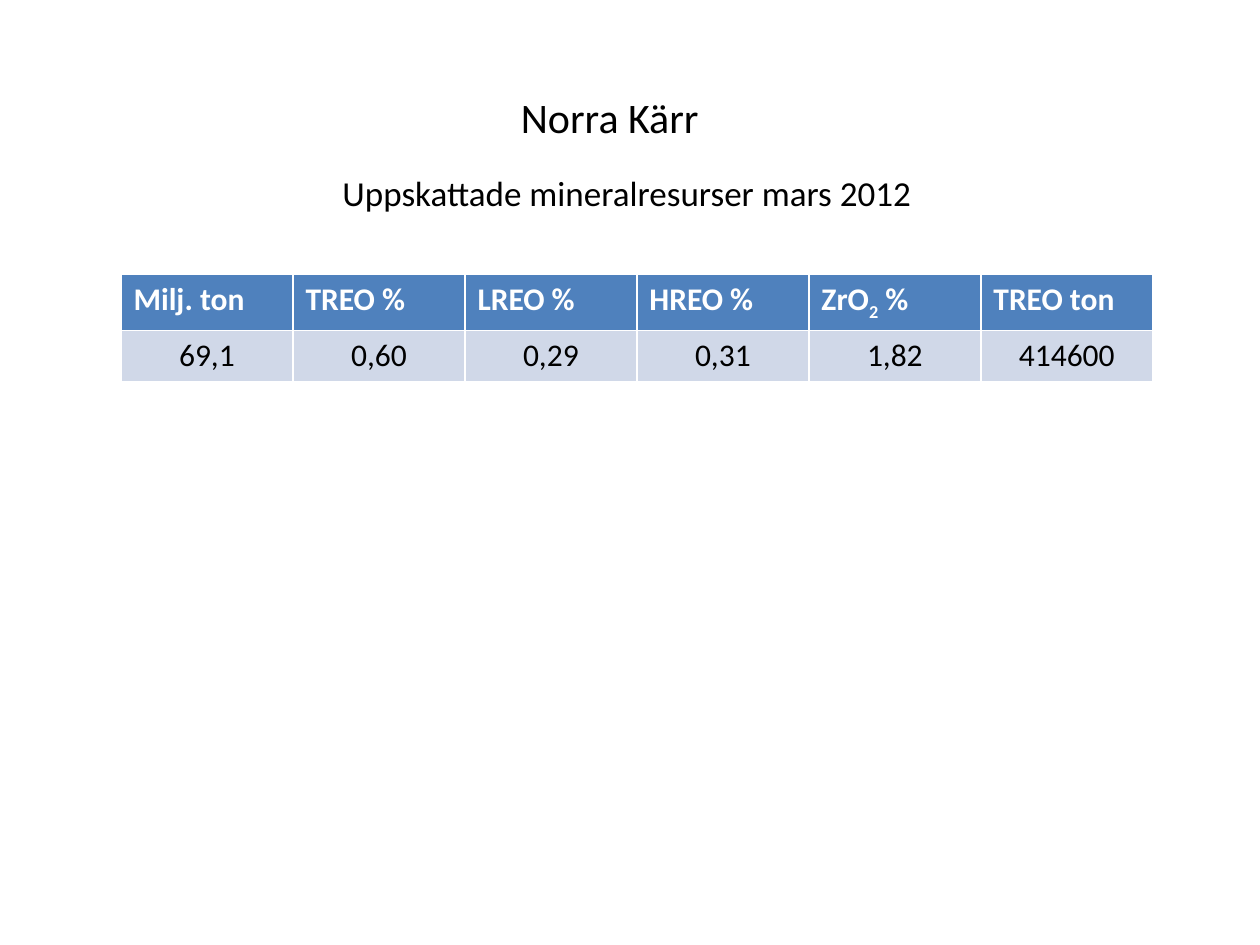
from dataclasses import dataclass

from pptx import Presentation
from pptx.dml.color import RGBColor
from pptx.enum.text import MSO_AUTO_SIZE, PP_ALIGN
from pptx.util import Inches, Pt


@dataclass(frozen=True)
class Theme:
    font: str = "Calibri"
    dark: str = "000000"
    light: str = "FFFFFF"
    header_fill: str = "4F81BD"
    body_fill: str = "D0D8E8"
    title_size: int = 24
    subtitle_size: int = 20
    table_size: int = 18


THEME = Theme()

# Content: headings are (text, size, left, top, width, height)
HEADINGS = [
    ("Norra Kärr", THEME.title_size, 3.66, 0.68, 2.36, 0.5),
    ("Uppskattade mineralresurser mars 2012", THEME.subtitle_size, 2.5, 1.31, 4.95, 0.44),
]
# Each column is (header runs, value); the second header run is a subscript
COLUMNS = [
    (["Milj. ton"], "69,1"),
    (["TREO %"], "0,60"),
    (["LREO %"], "0,29"),
    (["HREO %"], "0,31"),
    (["ZrO", "2", " %"], "1,82"),
    (["TREO ton"], "414600"),
]
TABLE_LEFT, TABLE_TOP = 0.96, 2.18
COLUMN_WIDTH, ROW_HEIGHT = 1.365, 0.41


def format_run(run, size, color, bold=False):
    run.font.name = THEME.font
    run.font.size = Pt(size)
    run.font.bold = bold
    run.font.color.rgb = RGBColor.from_string(color)


def add_heading(slide, text, size, *box):
    text_frame = slide.shapes.add_textbox(*map(Inches, box)).text_frame
    text_frame.word_wrap = True
    text_frame.auto_size = MSO_AUTO_SIZE.SHAPE_TO_FIT_TEXT
    text_frame.text = text
    paragraph = text_frame.paragraphs[0]
    paragraph.alignment = PP_ALIGN.CENTER
    format_run(paragraph.runs[0], size, THEME.dark)


def fill_cell(cell, texts, fill, color, bold, alignment):
    cell.fill.solid()
    cell.fill.fore_color.rgb = RGBColor.from_string(fill)
    paragraph = cell.text_frame.paragraphs[0]
    paragraph.alignment = alignment
    for index, text in enumerate(texts):
        run = paragraph.add_run()
        run.text = text
        format_run(run, THEME.table_size, color, bold)
        if index == 1:
            run.font._element.set("baseline", "-25000")


def add_resource_table(slide):
    # The default table style supplies the white cell borders
    table = slide.shapes.add_table(
        2, len(COLUMNS), Inches(TABLE_LEFT), Inches(TABLE_TOP),
        Inches(COLUMN_WIDTH * len(COLUMNS)), Inches(ROW_HEIGHT * 2)).table
    for row in table.rows:
        row.height = Inches(ROW_HEIGHT)
    for index, (header, value) in enumerate(COLUMNS):
        table.columns[index].width = Inches(COLUMN_WIDTH)
        fill_cell(table.cell(0, index), header, THEME.header_fill, THEME.light,
                  True, PP_ALIGN.LEFT)
        fill_cell(table.cell(1, index), [value], THEME.body_fill, THEME.dark,
                  False, PP_ALIGN.CENTER)


def main():
    presentation = Presentation()
    presentation.slide_width, presentation.slide_height = Inches(10), Inches(7.5)
    slide = presentation.slides.add_slide(presentation.slide_layouts[6])
    # Title and subtitle
    for heading in HEADINGS:
        add_heading(slide, *heading)
    # Mineral resource estimates
    add_resource_table(slide)
    presentation.save("out.pptx")


if __name__ == "__main__":
    main()
